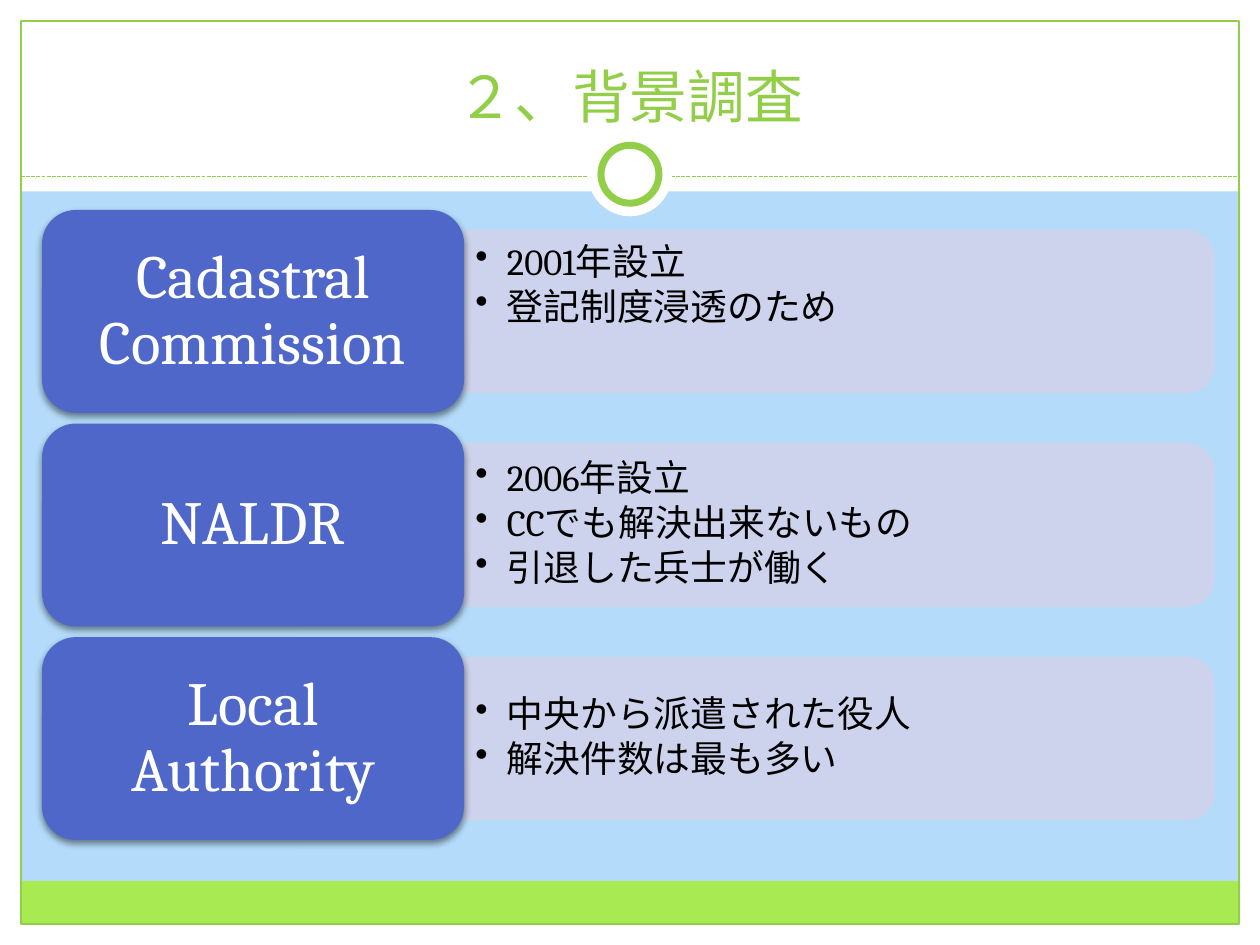
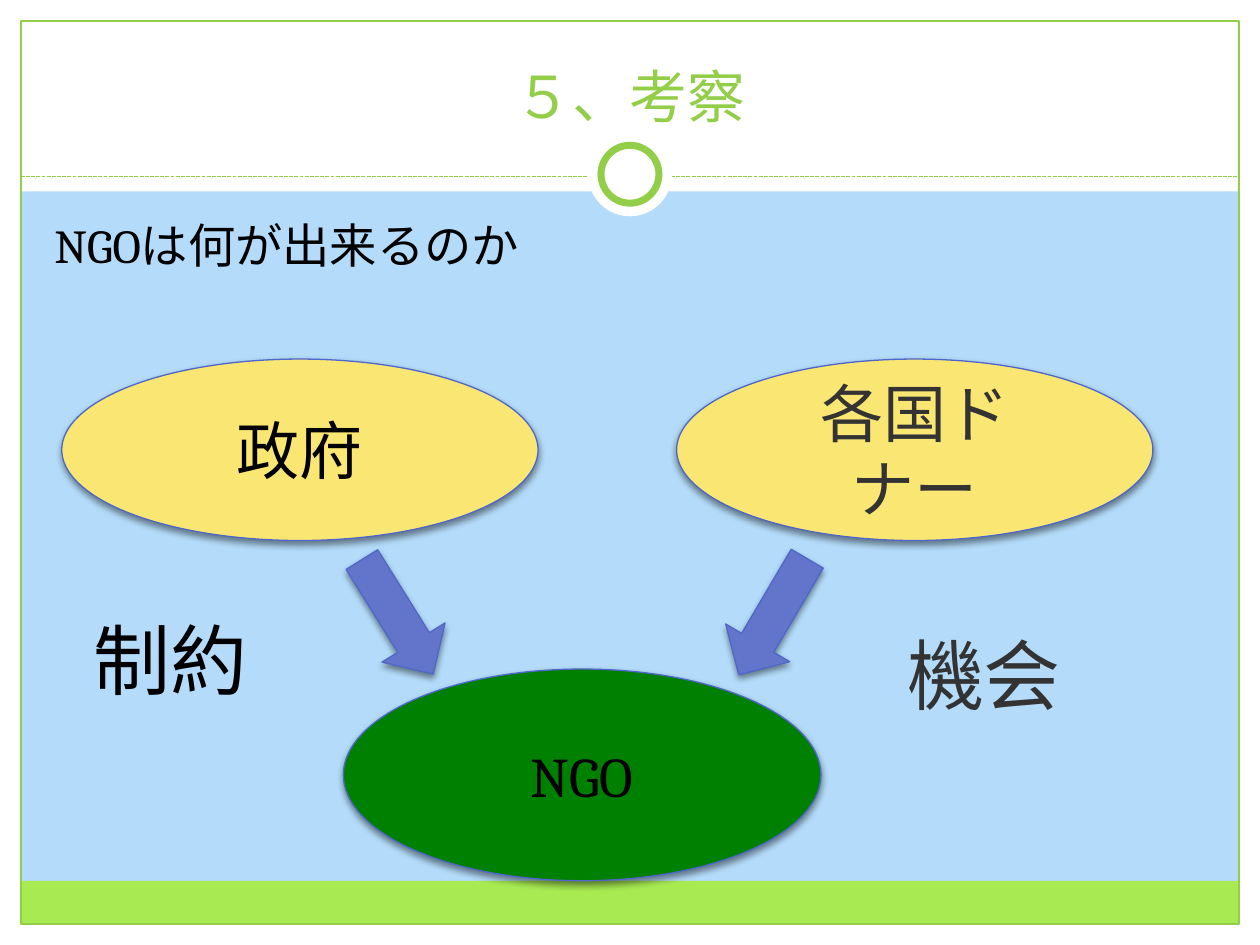
"""Builds two slides of a land registry talk: background survey and discussion."""
from lxml.etree import SubElement
from pptx import Presentation
from pptx.dml.color import RGBColor
from pptx.enum.dml import MSO_LINE
from pptx.enum.shapes import MSO_CONNECTOR, MSO_SHAPE
from pptx.enum.text import MSO_ANCHOR, PP_ALIGN
from pptx.oxml.ns import qn
from pptx.util import Inches, Pt

COLORS = {
    "sky": "B4DCFA", "white": "FFFFFF", "lime": "A7EA52", "leaf": "93CE48",
    "blue": "4E67C8", "arrow": "6375CB", "lavender": "D0D3EB",
    "yellow": "FAE673", "green": "008000", "black": "000000", "gray": "333333",
}
FONT = "Cambria"
COLUMNS, ROWS = 60, 45
CELL = Inches(10) // COLUMNS
MARGIN = 2
BODY_TOP = 10


def color(name):
    return RGBColor.from_string(COLORS[name])


class Deck:
    """Holds the style and the current slide; lengths are grid columns and rows."""

    def __init__(self):
        self.presentation = Presentation()
        self.presentation.slide_width = COLUMNS * CELL
        self.presentation.slide_height = ROWS * CELL
        self.slide = None

    def grid(self, *cells):
        return [round(cell * CELL) for cell in cells]

    def new_slide(self, title):
        self.slide = self.presentation.slides.add_slide(self.presentation.slide_layouts[6])
        background = self.slide.background.fill
        background.solid()
        background.fore_color.rgb = color("sky")
        self.frame()
        self.text((MARGIN, 1.5, COLUMNS - 2 * MARGIN, 5), [title], 33, "leaf",
                  align=PP_ALIGN.CENTER, anchor=MSO_ANCHOR.BOTTOM)

    def frame(self):
        inner = COLUMNS - 2
        for edge in ((0, ROWS - 1, COLUMNS, 1), (0, 0, COLUMNS, 9.12),
                     (0, 0, 1, ROWS), (COLUMNS - 1, 0, 1, ROWS)):
            self.shape(MSO_SHAPE.RECTANGLE, edge, "white")
        self.shape(MSO_SHAPE.RECTANGLE, (1, 41.95, inner, 2.05), "lime")
        self.shape(MSO_SHAPE.RECTANGLE, (1, 1, inner, ROWS - 2), line="leaf")
        self.dashed_rule(8.4)
        self.disc(8.3, 4)
        self.disc(8.3, 2.76, line="leaf", weight=4)

    def disc(self, center_row, size, **style):
        place = ((COLUMNS - size) / 2, center_row - size / 2, size, size)
        self.shape(MSO_SHAPE.OVAL, place, "white", **style)

    def dashed_rule(self, row):
        rule = self.slide.shapes.add_connector(
            MSO_CONNECTOR.STRAIGHT, *self.grid(1, row, COLUMNS - 1, row))
        rule.line.color.rgb = color("leaf")
        rule.line.width = Pt(0.75)
        rule.line.dash_style = MSO_LINE.SQUARE_DOT
        SubElement(rule.element.spPr, qn("a:effectLst"))

    def shape(self, kind, place, fill=None, line=None, weight=0.75,
              rotation=0, shadow=False, opacity=100):
        shape = self.slide.shapes.add_shape(kind, *self.grid(*place))
        shape.rotation = rotation
        if fill:
            shape.fill.solid()
            shape.fill.fore_color.rgb = color(fill)
        else:
            shape.fill.background()
        if line:
            shape.line.color.rgb = color(line)
            shape.line.width = Pt(weight)
        else:
            shape.line.fill.background()
        shape.shadow.inherit = False
        properties = shape.element.spPr
        if opacity < 100:
            for tint in list(properties.iter(qn("a:srgbClr"))):
                SubElement(tint, qn("a:alpha"), val=str(opacity * 1000))
        if shadow:
            cast = SubElement(properties.find(qn("a:effectLst")), qn("a:outerShdw"),
                              blurRad=str(Pt(4)), dist=str(Pt(2)), dir="5400000",
                              rotWithShape="0")
            black = SubElement(cast, qn("a:srgbClr"), val=COLORS["black"])
            SubElement(black, qn("a:alpha"), val="45000")
        return shape

    def text(self, place, lines, size, ink="black", **style):
        box = self.slide.shapes.add_textbox(*self.grid(*place))
        self.set_lines(box, lines, size, ink, **style)

    def set_lines(self, holder, lines, size, ink, align=PP_ALIGN.LEFT,
                  anchor=MSO_ANCHOR.TOP, insets=(0.1, 0.05), spacing=None, bullets=False):
        frame = holder.text_frame
        frame.word_wrap = True
        frame.vertical_anchor = anchor
        frame.margin_left = frame.margin_right = Inches(insets[0])
        frame.margin_top = frame.margin_bottom = Inches(insets[1])
        frame.text = "\n".join(lines)
        for paragraph in frame.paragraphs:
            paragraph.alignment = align
            if spacing:
                paragraph.line_spacing = spacing
            if bullets:
                paragraph.space_after = Pt(3)
                layout = paragraph._p.get_or_add_pPr()
                layout.set("marL", str(Inches(0.25)))
                layout.set("indent", str(-Inches(0.25)))
                SubElement(layout, qn("a:buChar"), char="•")
            for run in paragraph.runs:
                run.font.name = FONT
                run.font.size = Pt(size)
                run.font.color.rgb = color(ink)

    def institution(self, top, name, facts, anchor):
        width, height = 20.1, 9.66
        length, depth = 35.7, 7.74
        left = MARGIN + width
        middle = top + height / 2
        self.shape(MSO_SHAPE.ROUND_2_SAME_RECTANGLE,
                   (left + (length - depth) / 2, middle - length / 2, depth, length),
                   "lavender", line="lavender", rotation=90, opacity=90)
        self.text((left, middle - 3.48, 35.34, 6.96), facts, 21, anchor=anchor,
                  insets=(0.09, 0.04), spacing=0.9, bullets=True)
        label = self.shape(MSO_SHAPE.ROUNDED_RECTANGLE, (MARGIN, top, width, height),
                           "blue", shadow=True)
        self.set_lines(label, [name], 35, "white", align=PP_ALIGN.CENTER,
                       anchor=MSO_ANCHOR.MIDDLE, insets=(0.15, 0.07), spacing=0.9)

    def actor(self, place, name, size, fill, ink="black"):
        oval = self.shape(MSO_SHAPE.OVAL, place, fill, line="blue", shadow=True)
        self.set_lines(oval, [name], size, ink, align=PP_ALIGN.CENTER,
                       anchor=MSO_ANCHOR.MIDDLE)

    def influence(self, left, rotation):
        self.shape(MSO_SHAPE.LEFT_ARROW, (left, 27.6, 6.42, 3.54), "arrow",
                   line="blue", rotation=rotation, shadow=True)


def background_survey(deck):
    deck.new_slide("２、背景調査")
    institutions = [
        ("Cadastral Commission", ["2001年設立", "登記制度浸透のため"], MSO_ANCHOR.TOP),
        ("NALDR", ["2006年設立", "CCでも解決出来ないもの", "引退した兵士が働く"],
         MSO_ANCHOR.MIDDLE),
        ("Local Authority", ["中央から派遣された役人", "解決件数は最も多い"],
         MSO_ANCHOR.MIDDLE),
    ]
    for index, (name, facts, anchor) in enumerate(institutions):
        deck.institution(BODY_TOP + index * 10.17, name, facts, anchor)


def discussion(deck):
    deck.new_slide("５、考察")
    deck.text((MARGIN, BODY_TOP, 55.8, 30), ["NGOは何が出来るのか"], 27)
    deck.actor((16.35, 31.86, 22.74, 10.08), "NGO", 32, "green")
    for left, name, ink in ((2.94, "政府", "black"), (32.22, "各国ドナー", "gray")):
        deck.actor((left, 17.1, 22.68, 8.64), name, 36, "yellow", ink)
    for left, rotation in ((15.72, 238.1), (33.6, 300.5)):
        deck.influence(left, rotation)
    deck.text((3.84, 28.86, 10.14, 5.04), ["制約"], 44)
    deck.text((42.6, 29.58, 8.7, 5.04), ["機会"], 44, "gray")


def main():
    deck = Deck()
    background_survey(deck)
    discussion(deck)
    deck.presentation.save("out.pptx")


if __name__ == "__main__":
    main()
